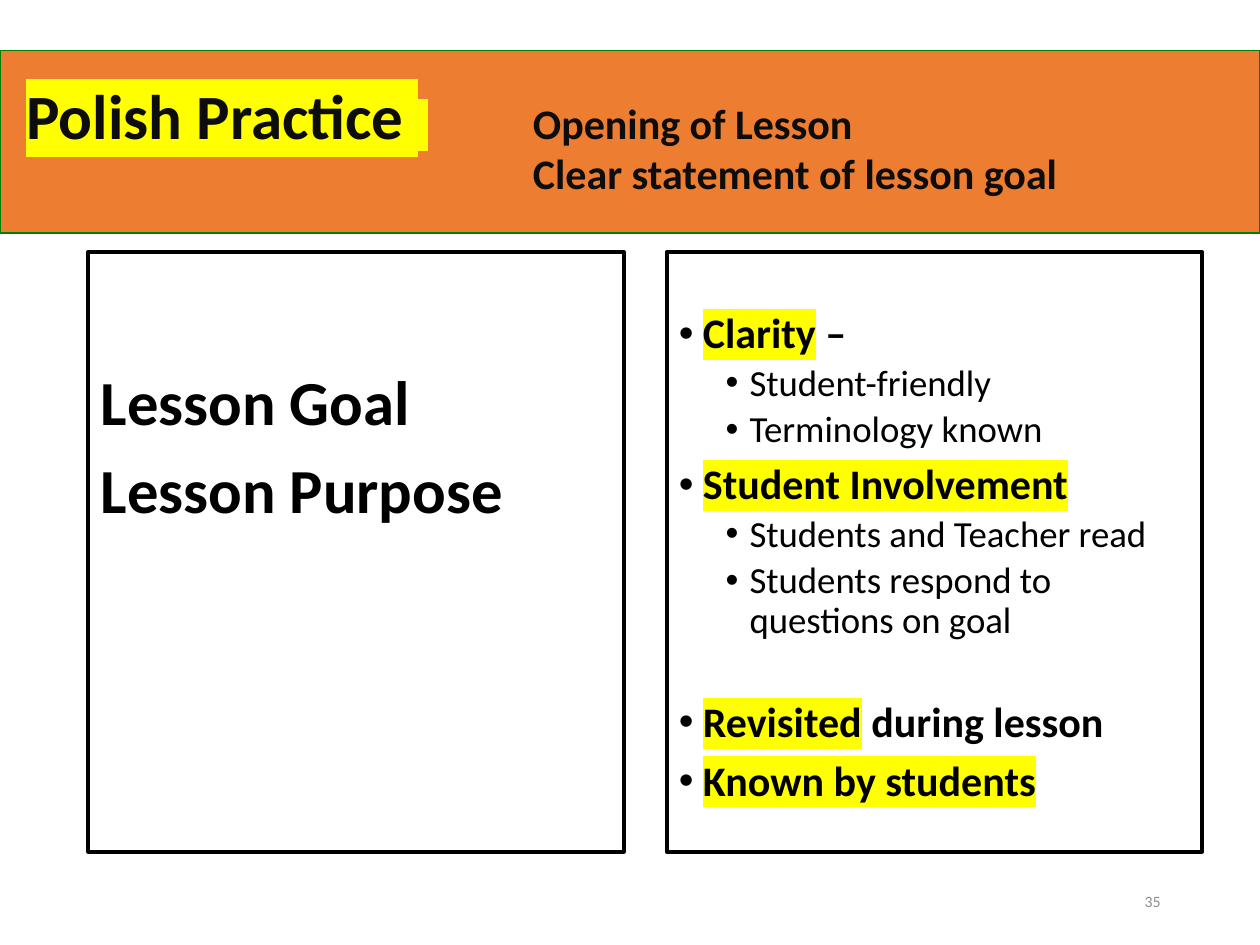
from dataclasses import dataclass

from lxml.etree import SubElement
from pptx import Presentation
from pptx.dml.color import RGBColor as Color
from pptx.enum.shapes import MSO_SHAPE as Preset
from pptx.enum.text import MSO_ANCHOR as Anchor, PP_ALIGN as Align
from pptx.oxml.ns import qn
from pptx.util import Inches, Pt


@dataclass(frozen=True)
class Theme:
    font: str = "Calibri"
    black: str = "000000"
    ink: str = "0D0D0D"
    orange: str = "ED7D31"
    green: str = "008000"
    yellow: str = "FFFF00"
    gray: str = "8C8C8C"
    title: float = 36
    goal: float = 35.8
    point: float = 24
    detail: float = 21
    number: float = 9


@dataclass(frozen=True)
class Area:
    left: float
    top: float
    width: float
    height: float


@dataclass(frozen=True)
class Span:
    text: str
    size: float
    bold: bool = True
    marked: bool = False
    color: str = Theme.black


@dataclass(frozen=True)
class Para:
    spans: tuple
    before: float = 0
    spacing: float = 0.9
    indent: float = 0
    tab: float = 0


THEME = Theme()
WIDTH, HEIGHT = 10, 7.5
COLUMN_LEFT, COLUMN_STEP = 0.07, 0.459
HANG = 0.19
POINT_GAP, DETAIL_GAP, SECTION_GAP = 7.5, 3.8, 34.3


def place(area: Area) -> tuple:
    """Turn shares of the slide into lengths."""
    return (Inches(area.left * WIDTH), Inches(area.top * HEIGHT),
            Inches(area.width * WIDTH), Inches(area.height * HEIGHT))


def column(index: int) -> Area:
    """Give the area of one body column."""
    return Area(COLUMN_LEFT + index * COLUMN_STEP, 2 / HEIGHT, 0.425, 4.76 / HEIGHT)


def add_panel(page, area: Area, line: str, weight: float, fill: str = ""):
    """Draw an outlined rectangle, filled if a colour is given."""
    box = page.shapes.add_shape(Preset.RECTANGLE, *place(area))
    box.shadow.inherit = False
    if fill:
        box.fill.solid()
        box.fill.fore_color.rgb = Color.from_string(fill)
    else:
        box.fill.background()
    box.line.color.rgb = Color.from_string(line)
    box.line.width = Pt(weight)
    return box


def add_span(para, span: Span) -> None:
    """Add one styled run to a paragraph."""
    run = para.add_run()
    run.text = span.text
    font = run.font
    font.size, font.bold = Pt(span.size), span.bold
    font.color.rgb = Color.from_string(span.color)
    if span.marked:
        properties = run._r.get_or_add_rPr()
        mark = SubElement(properties, qn("a:highlight"))
        SubElement(mark, qn("a:srgbClr"), val=THEME.yellow)
    font.name = THEME.font


def write(box, paras: list, anchor=Anchor.TOP, align=Align.LEFT,
          left: float = 0.1, top: float = 0.05) -> None:
    """Fill a box with paragraphs."""
    frame = box.text_frame
    frame.word_wrap = True
    frame.vertical_anchor = anchor
    frame.margin_left, frame.margin_top = Inches(left), Inches(top)
    for index, content in enumerate(paras):
        para = frame.add_paragraph() if index else frame.paragraphs[0]
        para.alignment = align
        para.line_spacing = content.spacing
        para.space_before = Pt(content.before)
        properties = para._p.get_or_add_pPr()
        if content.indent:
            properties.set("marL", str(Inches(content.indent)))
            properties.set("indent", str(-Inches(HANG)))
            SubElement(properties, qn("a:buFont"), typeface="Arial")
            SubElement(properties, qn("a:buChar"), char="•")
        if content.tab:
            stops = SubElement(properties, qn("a:tabLst"))
            SubElement(stops, qn("a:tab"), pos=str(Inches(content.tab)), algn="l")
        for span in content.spans:
            add_span(para, span)


def point(marked: str, plain: str = "", before: float = POINT_GAP) -> Para:
    """Describe a main point with a highlighted start."""
    spans = [Span(marked, THEME.point, marked=True)]
    if plain:
        spans.append(Span(plain, THEME.point))
    return Para(tuple(spans), before, indent=HANG)


def detail(text: str) -> Para:
    """Describe a point of the second level."""
    return Para((Span(text, THEME.detail, bold=False),), DETAIL_GAP, indent=0.56)


def goal(text: str, before: float = 0) -> Para:
    """Describe a large line of the left column."""
    return Para((Span(text, THEME.goal),), before, spacing=1)


def add_header(page) -> None:
    """Draw the title band with its two subtitle lines."""
    band = add_panel(page, Area(0, 0.4 / HEIGHT, 1, 1.45 / HEIGHT),
                     THEME.green, 0.75, THEME.orange)
    opening = Para((
        Span("Polish Practice ", THEME.title, marked=True, color=THEME.ink),
        Span(" ", THEME.point, marked=True, color=THEME.ink),
        Span("\tOpening of Lesson", THEME.point, color=THEME.ink)), tab=4.02)
    statement = Para((Span("\tClear statement of lesson goal", THEME.point,
                           color=THEME.ink),), tab=4.02)
    write(band, [opening, statement], Anchor.MIDDLE, left=0.21)


def main() -> None:
    """Build and save the slide."""
    deck = Presentation()
    deck.slide_width, deck.slide_height = Inches(WIDTH), Inches(HEIGHT)
    page = deck.slides.add_slide(deck.slide_layouts[6])
    add_header(page)
    goals = add_panel(page, column(0), THEME.black, 2.25)
    write(goals, [goal("Lesson Goal"), goal("Lesson Purpose", POINT_GAP)], top=0.88)
    points = add_panel(page, column(1), THEME.black, 2.25)
    write(points, [
        point("Clarity", " –", before=0),
        detail("Student-friendly"),
        detail("Terminology known"),
        point("Student Involvement"),
        detail("Students and Teacher read"),
        detail("Students respond to questions on goal"),
        point("Revisited", " during lesson", before=SECTION_GAP),
        point("Known by students"),
    ], top=0.48)
    number = page.shapes.add_textbox(
        *place(Area(0.706, 6.95 / HEIGHT, 0.225, 0.4 / HEIGHT)))
    write(number, [Para((Span("35", THEME.number, bold=False, color=THEME.gray),),
                        spacing=1)], Anchor.MIDDLE, Align.RIGHT)
    deck.save("out.pptx")


if __name__ == "__main__":
    main()
